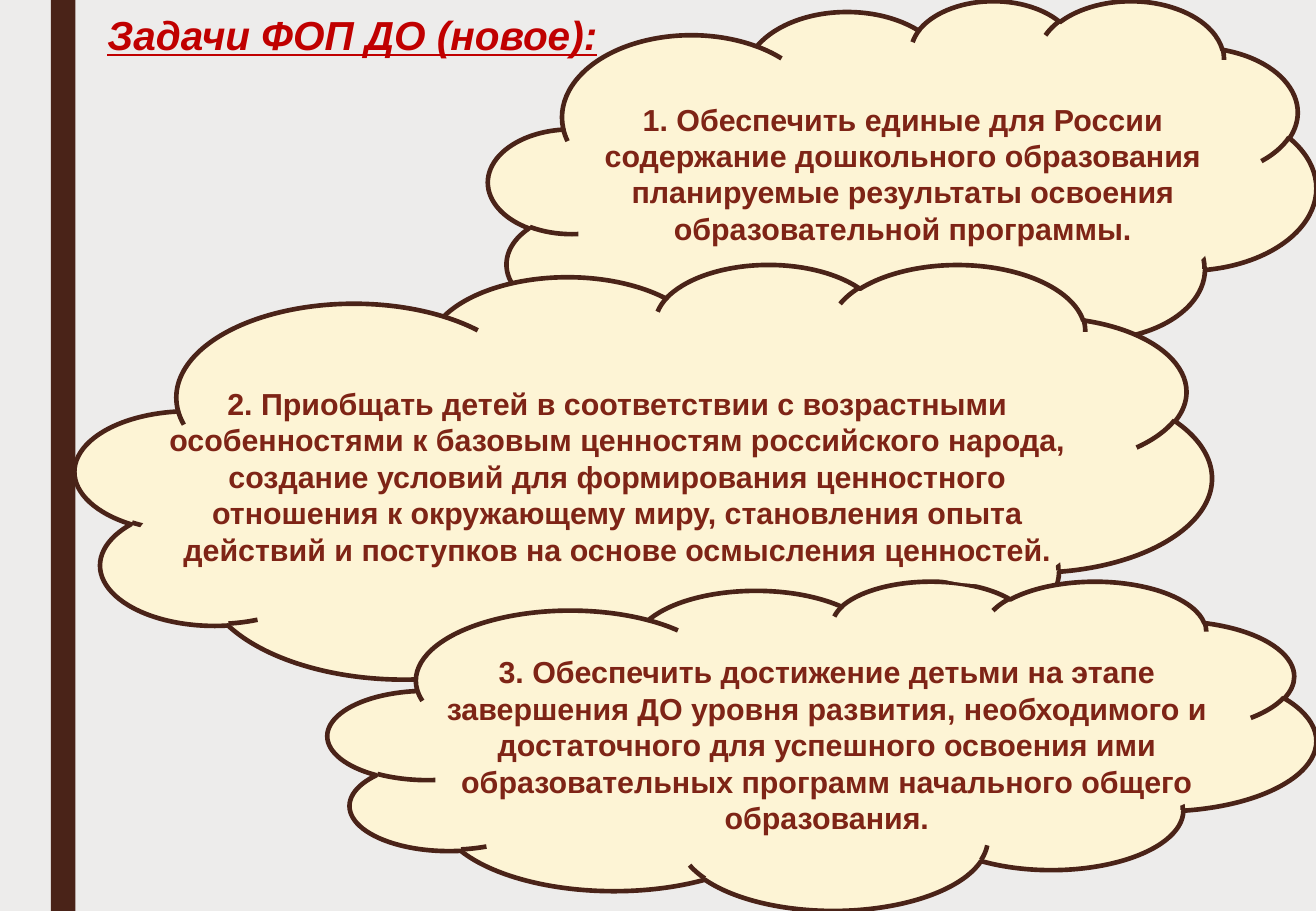
from pptx import Presentation
from pptx.dml.color import RGBColor
from pptx.enum.shapes import MSO_SHAPE
from pptx.enum.text import MSO_ANCHOR, MSO_AUTO_SIZE, PP_ALIGN
from pptx.util import Inches, Pt

CLOUD, ELLIPSE, RECT = MSO_SHAPE.CLOUD, MSO_SHAPE.OVAL, MSO_SHAPE.RECTANGLE
TOP, CENTER, NO_FIT = MSO_ANCHOR.TOP, PP_ALIGN.CENTER, MSO_AUTO_SIZE.NONE
PAPER = RGBColor(0xED, 0xEC, 0xEB)
BROWN = RGBColor(0x4A, 0x23, 0x18)
CREAM = RGBColor(0xFD, 0xF4, 0xD5)
RED = RGBColor(0xC0, 0x00, 0x00)
RUST = RGBColor(0x7E, 0x24, 0x16)
WIDTH, HEIGHT = 10.83, 7.5

# Boxes are (left, top, width, height) in inches
TASKS = [
    ((4.02, 0, 6.81, 3.18), (4.59, 0.78, 5.68, 1.31),
     "1. Обеспечить единые для России содержание дошкольного образования "
     "планируемые результаты освоения образовательной программы."),
    ((0.62, 2.17, 9.35, 3.63), (1.22, 3.12, 7.72, 1.62),
     "2. Приобщать детей в соответствии с возрастными особенностями к базовым "
     "ценностям российского народа, создание условий для формирования "
     "ценностного отношения к окружающему миру, становления опыта действий "
     "и поступков на основе осмысления ценностей."),
    ((2.7, 4.78, 8.13, 2.71), (3.4, 5.33, 6.81, 1.62),
     "3. Обеспечить достижение детьми на этапе завершения ДО уровня развития, "
     "необходимого и достаточного для успешного освоения ими образовательных "
     "программ начального общего образования."),
]
PATCH_SIZE = (1.48, 0.75)
PATCH_CORNERS = [(8.5, 1.58), (1.12, 4.08), (7.35, 4.06), (8.5, 5.97)]


def add_figure(s, kind, box, fill, line=None):
    sp = s.shapes.add_shape(kind, *map(Inches, box))
    sp.shadow.inherit = False
    sp.fill.solid()
    sp.fill.fore_color.rgb = fill
    if line is None:
        sp.line.fill.background()
    else:
        sp.line.color.rgb = line
        sp.line.width = Pt(2.75)


def write(sp, text, size, color):
    tf = sp.text_frame
    tf.text = text
    tf.word_wrap = True
    tf.auto_size = NO_FIT
    tf.vertical_anchor = TOP
    p = tf.paragraphs[0]
    p.alignment = CENTER
    p.line_spacing = 1.0
    font = p.runs[0].font
    font.name, font.size, font.bold = "Arial", Pt(size), True
    font.color.rgb = color
    return font


def add_title(s, box):
    sp = s.shapes.title
    sp.left, sp.top, sp.width, sp.height = map(Inches, box)
    font = write(sp, "Задачи ФОП ДО (новое):", 24, RED)
    font.italic = font.underline = True


def add_tasks(s):
    """Clouds first, then patches hiding their inner curves, then the wording."""
    for cloud_box, _, _ in TASKS:
        add_figure(s, CLOUD, cloud_box, CREAM, BROWN)
    for corner in PATCH_CORNERS:
        add_figure(s, ELLIPSE, corner + PATCH_SIZE, CREAM)
    for _, text_box, text in TASKS:
        write(s.shapes.add_textbox(*map(Inches, text_box)), text, 18, RUST)


def main():
    prs = Presentation()
    prs.slide_width, prs.slide_height = Inches(WIDTH), Inches(HEIGHT)
    s = prs.slides.add_slide(prs.slide_layouts[5])
    s.background.fill.solid()
    s.background.fill.fore_color.rgb = PAPER
    add_figure(s, RECT, (0.42, 0, 0.2, HEIGHT), BROWN)
    add_title(s, (0.19, 0.03, 5.42, 0.5))
    add_tasks(s)
    prs.save("out.pptx")


if __name__ == "__main__":
    main()
